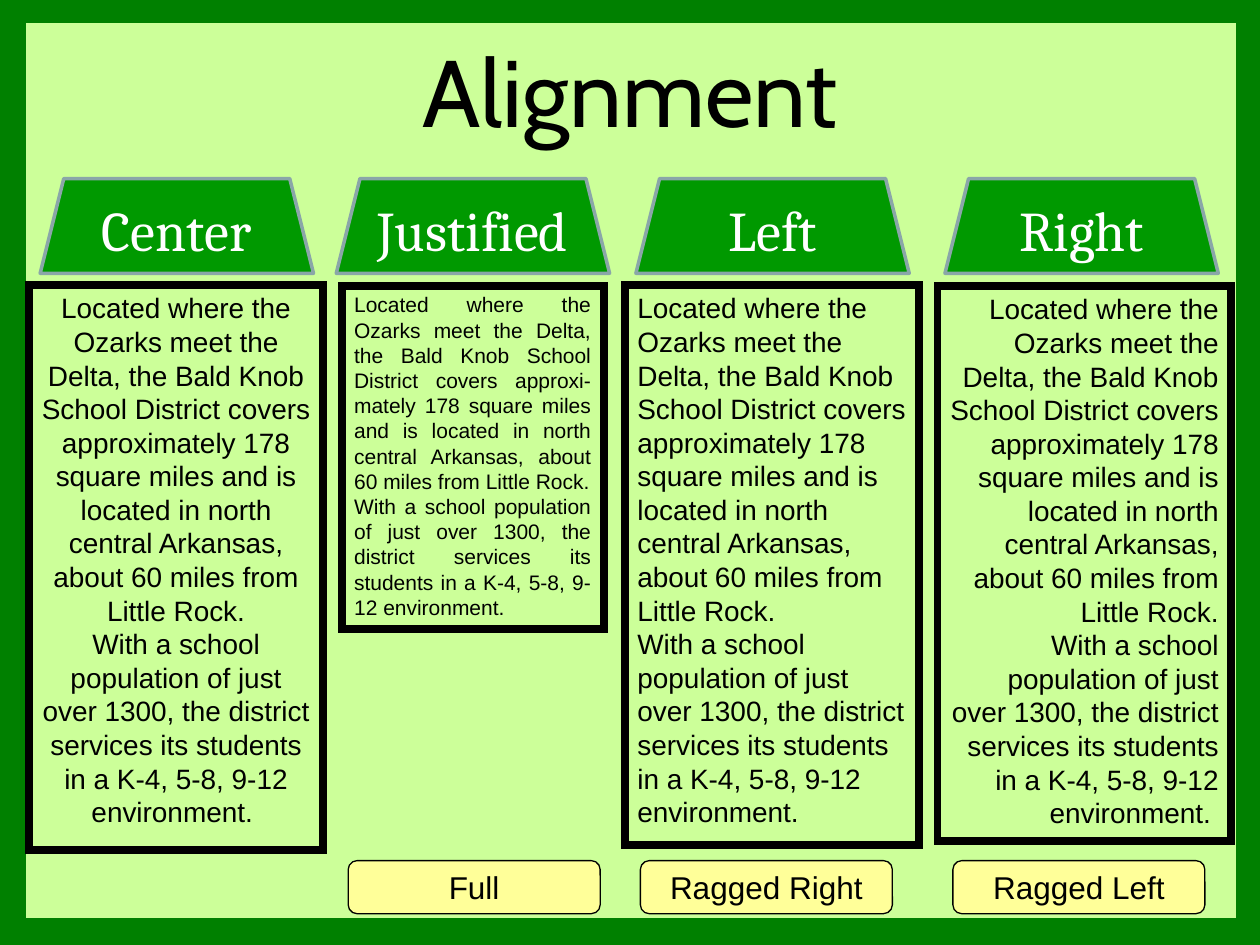
import pptx
import pptx.util
import pptx.dml.color
import pptx.enum.shapes
import pptx.enum.text
import pptx.oxml.ns
import lxml.etree

Cm = pptx.util.Cm
Pt = pptx.util.Pt
RGBColor = pptx.dml.color.RGBColor
SHAPE = pptx.enum.shapes.MSO_SHAPE
ALIGN = pptx.enum.text.PP_ALIGN
ANCHOR = pptx.enum.text.MSO_ANCHOR

COLORS = {
    "background": "CCFF99", "frame": "008000", "header": "009900",
    "header line": "8AA6A8", "label": "FFFF99", "black": "000000", "white": "FFFFFF",
}


def add_box(kind, position, fill, line, line_width):
    shape = slide.shapes.add_shape(kind, *[Cm(value) for value in position])
    shape.shadow.inherit = False
    shape.line.color.rgb = RGBColor.from_string(COLORS[line])
    shape.line.width = Pt(line_width)
    if fill:
        shape.fill.solid()
        shape.fill.fore_color.rgb = RGBColor.from_string(COLORS[fill])
    else:
        # Open boxes have square corners
        shape.fill.background()
        outline = shape.element.spPr.find(pptx.oxml.ns.qn("a:ln"))
        lxml.etree.SubElement(outline, pptx.oxml.ns.qn("a:miter"), lim="800000")
    return shape


def write_text(shape, paragraphs, font, size, color, alignment, frame_format):
    text_frame = shape.text_frame
    text_frame.text = "\n".join(paragraphs)
    for name, value in frame_format.items():
        setattr(text_frame, name, value)
    for paragraph in text_frame.paragraphs:
        paragraph.alignment = alignment
        for run in paragraph.runs:
            for name, value in {"name": font, "size": Pt(size), "bold": False}.items():
                setattr(run.font, name, value)
            run.font.color.rgb = RGBColor.from_string(COLORS[color])


presentation = pptx.Presentation()
presentation.slide_width, presentation.slide_height = Cm(25.4), Cm(19.05)
slide = presentation.slides.add_slide(presentation.slide_layouts[5])
slide.background.fill.solid()
slide.background.fill.fore_color.rgb = RGBColor.from_string(COLORS["background"])

# Frame around the slide
add_box(SHAPE.RECTANGLE, (0.26, 0.21, 24.92, 18.57), None, "frame", 15)

# Title
title = slide.shapes.title
title_place = {"left": 1.27, "top": 0.21, "width": 22.86, "height": 3.18}
for name, value in title_place.items():
    setattr(title, name, Cm(value))
middle_format = {"word_wrap": True, "vertical_anchor": ANCHOR.MIDDLE}
write_text(title, ["Alignment"], "Cabin", 54, "black", ALIGN.CENTER, middle_format)

# One column per alignment: sample text, header, label
location = ("Located where the Ozarks meet the Delta, the Bald Knob School District covers "
            "{} 178 square miles and is located in north central Arkansas, "
            "about 60 miles from Little Rock.")
population = ("With a school population of just over 1300, the district services "
              "its students in a K-4, 5-8, 9-12 environment.")
# header, alignment, header left, sample position, text size, word, ending, label, label left
columns = [
    ("Center", ALIGN.CENTER, 0.81, (0.59, 5.74, 5.92, 11.4), 16,
     "approximately", " ", None, None),
    ("Justified", ALIGN.JUSTIFY, 6.78, (6.89, 5.76, 5.28, 6.93), 12,
     "approxi-mately", " ", "Full", 7.02),
    ("Left", ALIGN.LEFT, 12.82, (12.6, 5.74, 5.92, 11.3), 16,
     "approximately", "", "Ragged Right", 12.91),
    ("Right", ALIGN.RIGHT, 19.05, (18.9, 5.76, 5.92, 11.2), 16,
     "approximately", " ", "Ragged Left", 19.21),
]
for (header_text, alignment, header_left, sample_position, size,
     word, ending, label_text, label_left) in columns:
    sample = add_box(SHAPE.RECTANGLE, sample_position, None, "black", 4.5)
    write_text(sample, [location.format(word), population + ending], "Arial", size, "black",
               alignment, {"word_wrap": True, "vertical_anchor": ANCHOR.TOP})

    header = add_box(SHAPE.TRAPEZOID, (header_left, 3.6, 5.51, 1.91),
                     "header", "header line", 2)
    write_text(header, [header_text], "Cambria", 32, "white", ALIGN.CENTER, middle_format)

    if label_text:
        label = add_box(SHAPE.ROUNDED_RECTANGLE, (label_left, 17.35, 5.08, 1.07),
                        "label", "black", 0.75)
        write_text(label, [label_text], "Arial", 18, "black", ALIGN.CENTER,
                   {"word_wrap": False, "vertical_anchor": ANCHOR.MIDDLE})

presentation.save("out.pptx")
